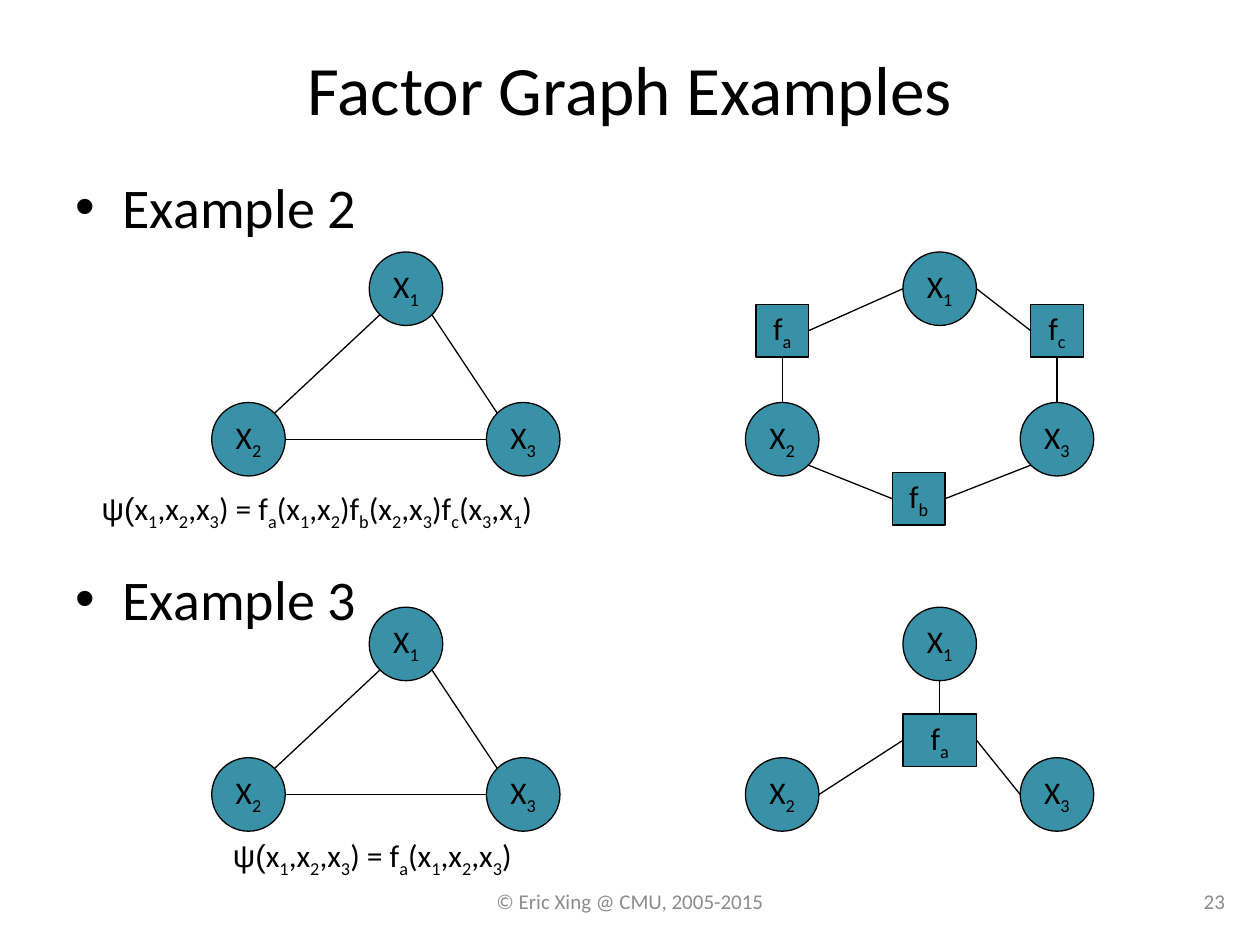
import lxml.etree
import pptx
import pptx.dml.color
import pptx.enum.shapes
import pptx.enum.text
import pptx.oxml.ns
import pptx.util

Pt = pptx.util.Pt
SHAPES = pptx.enum.shapes.MSO_SHAPE
ALIGN = pptx.enum.text.PP_ALIGN
ANCHOR = pptx.enum.text.MSO_ANCHOR
FONT = "Calibri"
BLACK, TEAL, GRAY = "000000", "3891A7", "8C8C8C"
NODE = 42
FACTOR = 30
SITES = {
    "top": (0.5, 0), "left": (0, 0.5), "bottom": (0.5, 1), "right": (1, 0.5),
    "upper left": (0.15, 0.15), "upper right": (0.85, 0.15),
    "lower left": (0.15, 0.85), "lower right": (0.85, 0.85),
}
SIDES = ["top", "left", "bottom", "right"]
TRIANGLE_EDGES = [
    ("X_2", "upper right", "X_1", "lower left"),
    ("X_2", "right", "X_3", "left"),
    ("X_1", "lower right", "X_3", "upper left"),
]
PAIRWISE_FACTORS = {
    "f_a": (6, 30, FACTOR), "f_b": (84, 126, FACTOR), "f_c": (163, 30, FACTOR),
}
PAIRWISE_EDGES = [
    ("X_1", "left", "f_a", "right"), ("f_a", "bottom", "X_2", "top"),
    ("X_2", "lower right", "f_b", "left"), ("f_b", "right", "X_3", "lower left"),
    ("X_3", "top", "f_c", "bottom"), ("f_c", "left", "X_1", "right"),
]
JOINT_FACTOR = {"f_a": (90, 61, NODE)}
JOINT_EDGES = [
    ("X_2", "right", "f_a", "left"), ("X_3", "left", "f_a", "right"),
    ("X_1", "bottom", "f_a", "top"),
]


def color(value):
    return pptx.dml.color.RGBColor.from_string(value)


def format_run(run, size, ink=BLACK, font=FONT):
    run.font.size = Pt(size)
    run.font.name = font
    run.font.color.rgb = color(ink)


def add_math(paragraph, text, font=FONT):
    base, *indexed = text.split("_")
    pieces = [(base, False)]
    for part in indexed:
        pieces += [(part[0], True), (part[1:], False)]
    for piece, is_subscript in pieces:
        if piece:
            run = paragraph.add_run()
            run.text = piece
            format_run(run, 18, font=font)
            if is_subscript:
                run.font._element.set("baseline", "-25000")


def add_text(slide, left, top, width, height, text="", size=18, ink=BLACK,
             align=ALIGN.LEFT, anchor=ANCHOR.TOP):
    frame = slide.shapes.add_textbox(Pt(left), Pt(top), Pt(width), Pt(height)).text_frame
    frame.word_wrap = True
    frame.vertical_anchor = anchor
    paragraph = frame.paragraphs[0]
    paragraph.alignment = align
    if text:
        paragraph.text = text
        format_run(paragraph.runs[0], size, ink)
    return paragraph


def add_node(slide, kind, label, left, top, width, height):
    node = slide.shapes.add_shape(kind, Pt(left), Pt(top), Pt(width), Pt(height))
    node.shadow.inherit = False
    node.fill.solid()
    node.fill.fore_color.rgb = color(TEAL)
    node.line.color.rgb = color(BLACK)
    node.line.width = Pt(0.75)
    frame = node.text_frame
    frame.word_wrap = False
    frame.vertical_anchor = ANCHOR.MIDDLE
    frame.paragraphs[0].alignment = ALIGN.CENTER
    add_math(frame.paragraphs[0], label)
    return node


def site(node, name):
    across, down = SITES[name]
    return (node.left + round(across * node.width),
            node.top + round(down * node.height))


def add_edge(slide, start, start_site, end, end_site):
    edge = slide.shapes.add_connector(
        pptx.enum.shapes.MSO_CONNECTOR.STRAIGHT,
        *site(start, start_site), *site(end, end_site))
    edge.line.color.rgb = color(BLACK)
    edge.line.width = Pt(0.75)
    lxml.etree.SubElement(edge._element.spPr, pptx.oxml.ns.qn("a:effectLst"))
    if start.auto_shape_type == SHAPES.RECTANGLE:
        edge.begin_connect(start, SIDES.index(start_site))
    if end.auto_shape_type == SHAPES.RECTANGLE:
        edge.end_connect(end, SIDES.index(end_site))


def add_graph(slide, left, top, edges, factors):
    nodes = {}
    for label, (x, y, width) in factors.items():
        nodes[label] = add_node(slide, SHAPES.RECTANGLE, label,
                                left + x, top + y, width, FACTOR)
    for label, x, y in [("X_1", 90, 0), ("X_2", 0, 86), ("X_3", 157, 86)]:
        nodes[label] = add_node(slide, SHAPES.OVAL, label,
                                left + x, top + y, NODE, NODE)
    for start, start_site, end, end_site in edges:
        add_edge(slide, nodes[start], start_site, nodes[end], end_site)


def add_heading(slide, left, top, text):
    heading = add_text(slide, left, top, 648, 46, text, 32)
    properties = heading._p.get_or_add_pPr()
    properties.set("marL", str(Pt(27)))
    properties.set("indent", str(Pt(-27)))
    bullet_font = lxml.etree.SubElement(properties, pptx.oxml.ns.qn("a:buFont"))
    bullet_font.set("typeface", "Arial")
    bullet = lxml.etree.SubElement(properties, pptx.oxml.ns.qn("a:buChar"))
    bullet.set("char", "•")


def add_formula(slide, left, top, width, text):
    formula = add_text(slide, left, top, width, 29)
    add_math(formula, "ψ(", "Arial")
    add_math(formula, text)


def add_example(slide, heading_top, graph_top, heading, factors, edges):
    add_heading(slide, 36, heading_top, heading)
    add_graph(slide, 121, graph_top, TRIANGLE_EDGES, {})
    add_graph(slide, 426, graph_top, edges, factors)


def add_title(slide, left, top, width, height, text):
    title = slide.shapes.title
    title.left, title.top, title.width, title.height = map(Pt, (left, top, width, height))
    title.text_frame.text = text
    title.text_frame.vertical_anchor = ANCHOR.MIDDLE
    title.text_frame.paragraphs[0].alignment = ALIGN.CENTER
    format_run(title.text_frame.paragraphs[0].runs[0], 39.6)


def add_footer(slide, top, height):
    add_text(slide, 246, top, 228, height, "© Eric Xing @ CMU, 2005-2015",
             12, GRAY, ALIGN.CENTER, ANCHOR.MIDDLE)
    add_text(slide, 639, top, 68, height, "23", 12, GRAY, ALIGN.RIGHT, ANCHOR.MIDDLE)


def main():
    deck = pptx.Presentation()
    deck.slide_width, deck.slide_height = Pt(720), Pt(540)
    slide = deck.slides.add_slide(deck.slide_layouts[5])
    add_title(slide, 36, 21.5, 648, 57, "Factor Graph Examples")
    add_example(slide, 95, 144, "Example 2", PAIRWISE_FACTORS, PAIRWISE_EDGES)
    add_formula(slide, 51, 276, 300, "x_1,x_2,x_3) = f_a(x_1,x_2)f_b(x_2,x_3)f_c(x_3,x_1)")
    add_example(slide, 319, 347, "Example 3", JOINT_FACTOR, JOINT_EDGES)
    add_formula(slide, 126, 474, 203, "x_1,x_2,x_3) = f_a(x_1,x_2,x_3)")
    add_footer(slide, 500.5, 29)
    deck.save("out.pptx")


if __name__ == "__main__":
    main()
